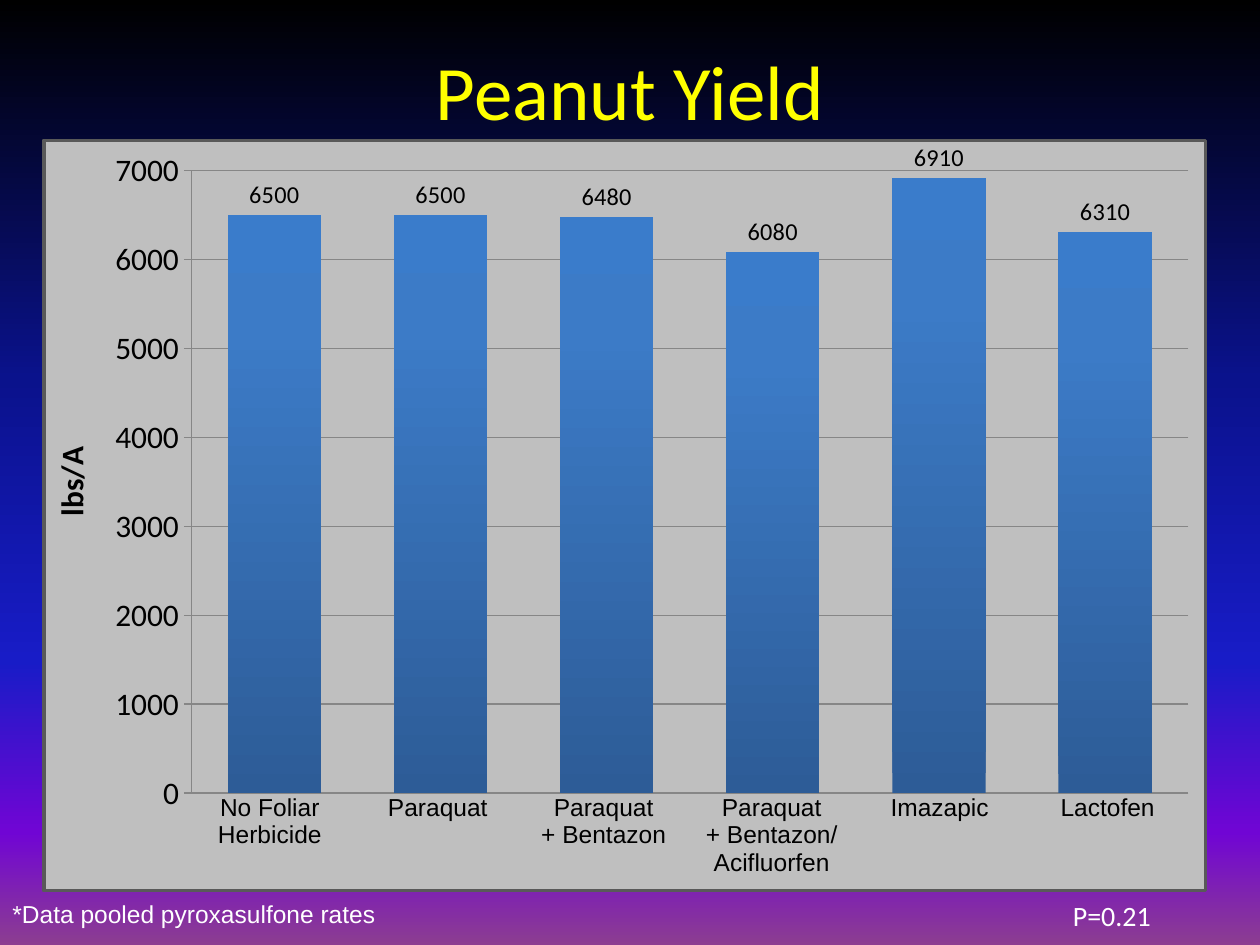
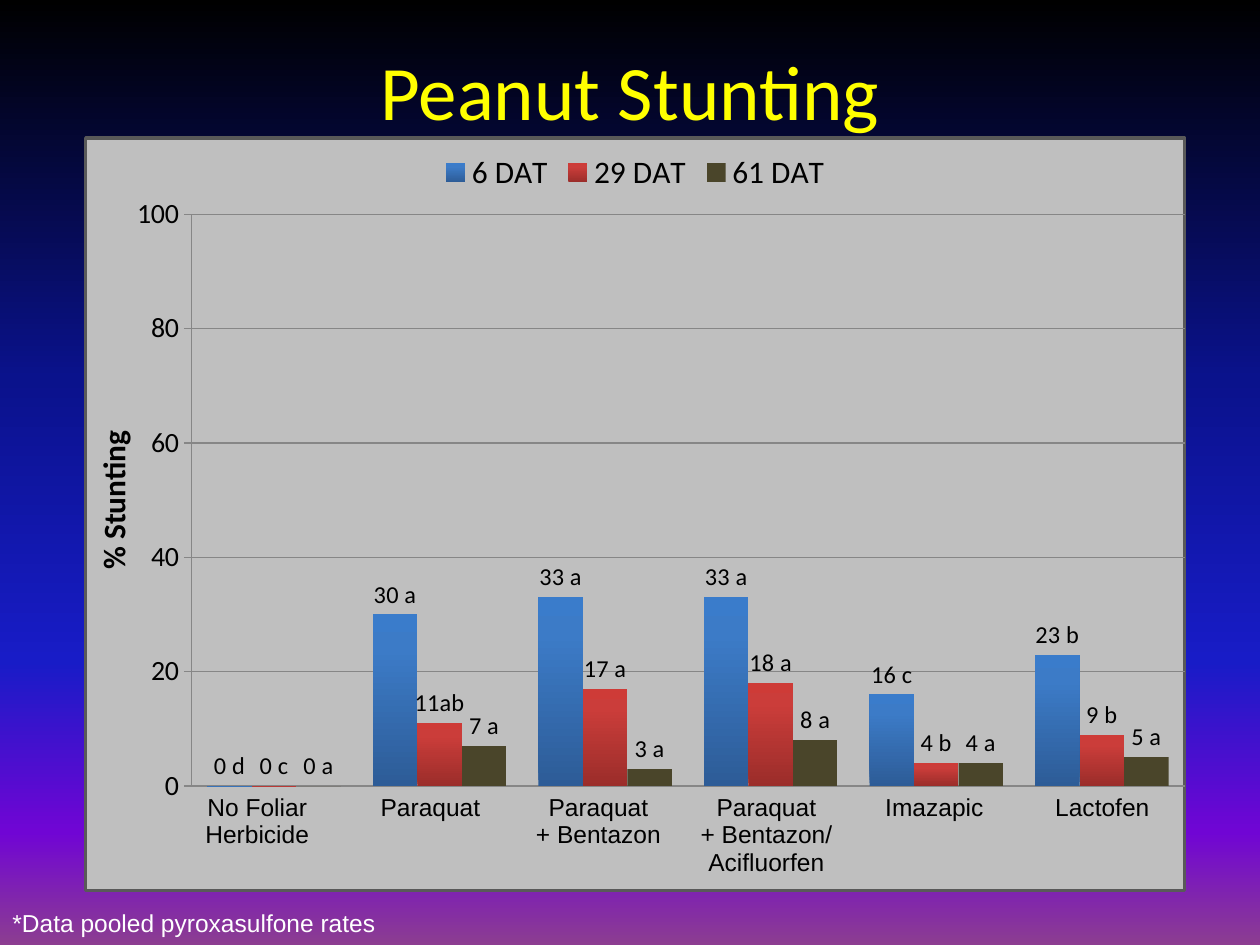
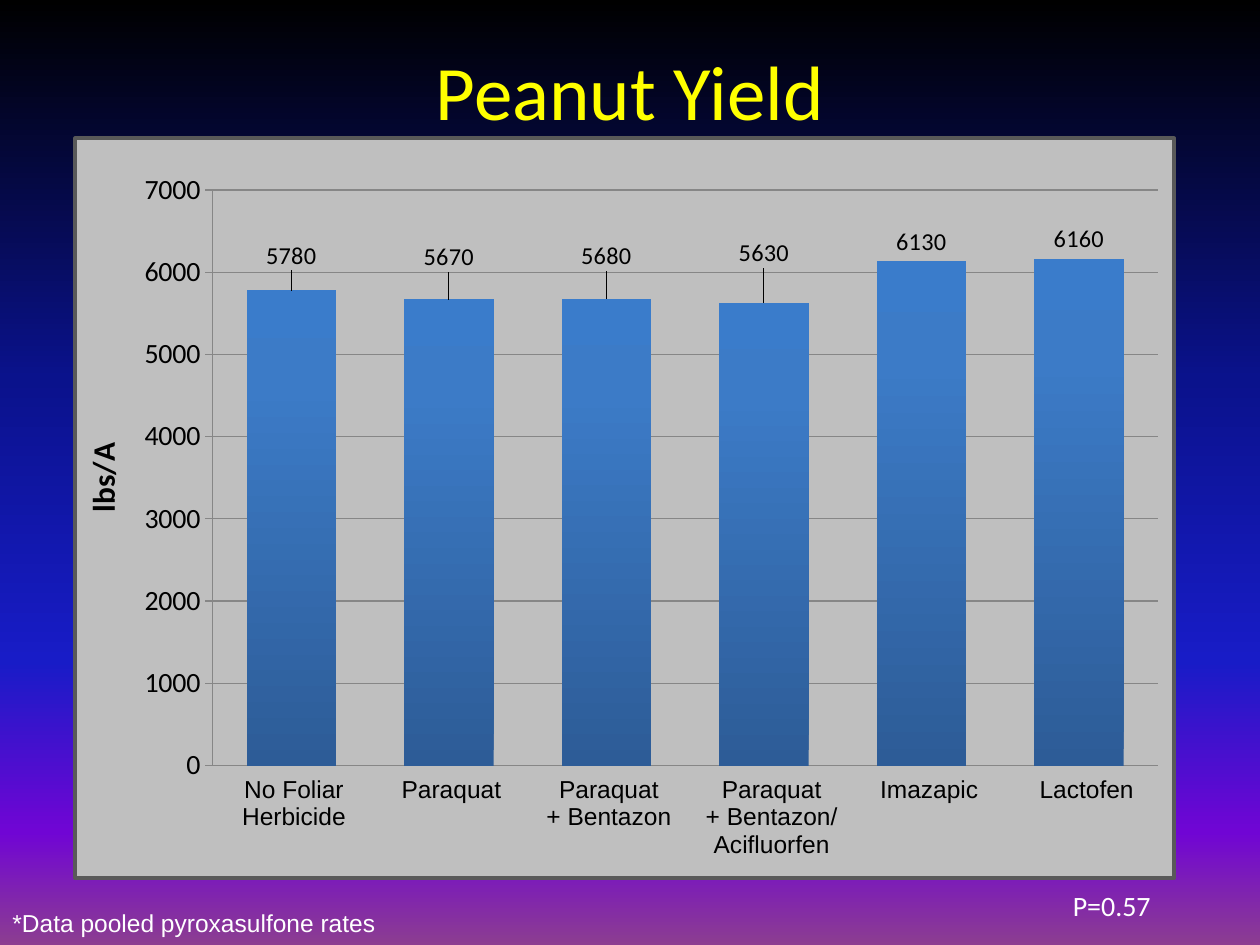
import pptx
import pptx.chart.data
import pptx.dml.color
import pptx.enum.chart
import pptx.enum.text
import pptx.oxml
import pptx.oxml.ns
import pptx.util

PX = 7620  # EMU per px, 120 px to the inch
NO_TABLE_STYLE = "{2D5ABB26-0587-4C30-8999-92F81FD0307C}"
COLORS = {
    "title": "FFFF00",
    "note": "FFFFFF",
    "text": "000000",
    "panel": "BFBFBF",
    "border": "595959",
    "grid": "868686",
}
BACKDROP = [(0, "000000"), (40, "0A128C"), (70, "181CC7"), (88, "7005D4"), (100, "8C3D91")]
BAR_FILLS = [
    [(0, "2D5C97"), (80, "3C7BC7"), (100, "3A7CCB")],
    [(0, "9B2D2A"), (80, "CB3D3A"), (100, "CE3B37")],
    [(0, "4A452A"), (100, "4A452A")],
]
TREATMENTS = [
    "No Foliar Herbicide",
    "Paraquat",
    "Paraquat\n+ Bentazon",
    "Paraquat\n+ Bentazon/\nAcifluorfen",
    "Imazapic",
    "Lactofen",
]
NAMESPACES = pptx.oxml.ns.nsdecls("c", "a")

# Each series: name, values, letters after the values, upward shifts of the labels
SLIDES = [
    {
        "title": "Peanut Yield", "axis": "lbs/A", "top": 7000, "step": 1000, "tick_size": 18,
        "chart": (40, 132, 1110, 718), "plot": (0.127, 0.04, 0.858, 0.83), "gap": 78,
        "series": [("Series 1", [6500, 6500, 6480, 6080, 6910, 6310], [""] * 6, [0] * 6)],
        "table": (170, 750, 112), "columns": [174, 146, 170, 150, 170, 150],
        "note_top": 850, "p_value": ("P=0.21", 1010, 850, 100, 30),
    },
    {
        "title": "Peanut Stunting", "axis": "% Stunting", "top": 100, "step": 20, "tick_size": 16,
        "chart": (80, 130, 1050, 720), "plot": (0.096, 0.101, 0.904, 0.76), "gap": 72,
        "series": [
            ("6 DAT", [0, 30, 33, 33, 16, 23], [" d", " a", " a", " a", " c", " b"], [0] * 6),
            ("29 DAT", [0, 11, 17, 18, 4, 9], [" c", "ab", " a", " a", " b", " b"], [0] * 6),
            ("61 DAT", [0, 7, 3, 8, 4, 5], [" a"] * 6, [0] * 6),
        ],
        "table": (160, 750, 100), "columns": [170] + [160] * 5,
        "note_top": 859, "p_value": None,
    },
    {
        "title": "Peanut Yield", "axis": "lbs/A", "top": 7000, "step": 1000, "tick_size": 16,
        "chart": (70, 130, 1050, 708), "plot": (0.125, 0.07, 0.86, 0.778), "gap": 76,
        "series": [("Series 1", [5780, 5670, 5680, 5630, 6130, 6160], [""] * 6,
                    [0.02, 0.03, 0.03, 0.04, 0, 0])],
        "table": (200, 733, 127), "columns": [160, 140, 160, 150, 150, 150],
        "note_top": 859, "p_value": ("P=0.57", 1010, 840, 110, 40),
    },
]


def style_font(font, size, color, name="Calibri", bold=False):
    font.size = pptx.util.Pt(size)
    font.name = name
    font.bold = bold
    font.color.rgb = pptx.dml.color.RGBColor.from_string(COLORS[color])


def set_gradient(fill, owner, stops, degrees):
    fill.gradient()
    gradient = owner.xpath(".//a:gradFill")[0]
    for child in list(gradient):
        gradient.remove(child)
    marks = "".join(
        f'<a:gs pos="{percent * 1000}"><a:srgbClr val="{color}"/></a:gs>' for percent, color in stops)
    gradient.append(pptx.oxml.parse_xml(f"<a:gsLst {NAMESPACES}>{marks}</a:gsLst>"))
    gradient.append(pptx.oxml.parse_xml(f'<a:lin {NAMESPACES} ang="{degrees * 60000}" scaled="0"/>'))


# Deck and shared backdrop
deck = pptx.Presentation()
deck.slide_width = 1200 * PX
deck.slide_height = 900 * PX
master = deck.slide_master
set_gradient(master.background.fill, master.element, BACKDROP, 90)

for content in SLIDES:
    page = deck.slides.add_slide(deck.slide_layouts[5])

    # Title
    title = page.shapes.title
    title.left, title.top, title.width, title.height = [n * PX for n in (60, 10, 1080, 150)]
    title.text_frame.text = content["title"]
    title.text_frame.vertical_anchor = pptx.enum.text.MSO_ANCHOR.MIDDLE
    para = title.text_frame.paragraphs[0]
    para.alignment = pptx.enum.text.PP_ALIGN.CENTER
    style_font(para.font, 44, "title")

    # Chart
    chart_data = pptx.chart.data.CategoryChartData()
    chart_data.categories = ["1", "2", "3", "4", "5", "6"]
    for name, values, letters, lifts in content["series"]:
        chart_data.add_series(name, values)
    chart = page.shapes.add_chart(
        pptx.enum.chart.XL_CHART_TYPE.COLUMN_CLUSTERED,
        *[n * PX for n in content["chart"]], chart_data).chart
    style_font(chart.font, 10, "text")
    chart.has_title = False
    chart.has_legend = len(content["series"]) > 1
    if chart.has_legend:
        chart.legend.position = pptx.enum.chart.XL_LEGEND_POSITION.TOP
        chart.legend.include_in_layout = False
        style_font(chart.legend.font, 18, "text")

    # Chart panel and plot area
    chart.element.xpath("c:chart")[0].addnext(pptx.oxml.parse_xml(
        f'<c:spPr {NAMESPACES}><a:solidFill><a:srgbClr val="{COLORS["panel"]}"/></a:solidFill>'
        f'<a:ln w="25400"><a:solidFill><a:srgbClr val="{COLORS["border"]}"/></a:solidFill></a:ln></c:spPr>'))
    plot_area = chart.element.xpath("c:chart/c:plotArea")[0]
    for layout in plot_area.xpath("c:layout"):
        plot_area.remove(layout)
    sides = "".join(f'<c:{side} val="{share}"/>' for side, share in zip("xywh", content["plot"]))
    plot_area.insert(0, pptx.oxml.parse_xml(
        f'<c:layout {NAMESPACES}><c:manualLayout><c:layoutTarget val="inner"/>'
        f'<c:xMode val="edge"/><c:yMode val="edge"/>{sides}</c:manualLayout></c:layout>'))

    # Axes
    chart.category_axis.visible = False
    axis = chart.value_axis
    axis.minimum_scale = 0
    axis.maximum_scale = content["top"]
    axis.major_unit = content["step"]
    axis.major_tick_mark = pptx.enum.chart.XL_TICK_MARK.OUTSIDE
    axis.has_major_gridlines = True
    for line in (axis.format.line, axis.major_gridlines.format.line):
        line.width = pptx.util.Pt(0.75)
        line.color.rgb = pptx.dml.color.RGBColor.from_string(COLORS["grid"])
    style_font(axis.tick_labels.font, content["tick_size"], "text")
    axis.axis_title.text_frame.text = content["axis"]
    style_font(axis.axis_title.text_frame.paragraphs[0].runs[0].font, 18, "text", bold=True)

    # Bars and their labels
    plot = chart.plots[0]
    plot.gap_width = content["gap"]
    plot.overlap = 0
    plot.vary_by_categories = False
    outside = pptx.enum.chart.XL_LABEL_POSITION.OUTSIDE_END
    series_elements = chart.element.xpath(".//c:ser")
    for series, element, stops, entry in zip(plot.series, series_elements, BAR_FILLS, content["series"]):
        set_gradient(series.format.fill, element, stops, 270)
        series.data_labels.show_value = True
        series.data_labels.position = outside
        style_font(series.data_labels.font, 14, "text")
        name, values, letters, lifts = entry
        for index, (value, letter, lift) in enumerate(zip(values, letters, lifts)):
            label = series.points[index].data_label
            label.text_frame.text = f"{value}{letter}"
            style_font(label.text_frame.paragraphs[0].runs[0].font, 14, "text")
            label.position = outside
            if lift:
                label_element = element.xpath(f".//c:dLbl[c:idx/@val='{index}']")[0]
                for layout in label_element.xpath("c:layout"):
                    label_element.remove(layout)
                label_element.insert(1, pptx.oxml.parse_xml(
                    f'<c:layout {NAMESPACES}><c:manualLayout><c:x val="0"/>'
                    f'<c:y val="{-lift}"/></c:manualLayout></c:layout>'))

    # Treatment names under the bars
    left, top, height = content["table"]
    frame = page.shapes.add_table(
        1, len(TREATMENTS), left * PX, top * PX, sum(content["columns"]) * PX, height * PX)
    frame.element.xpath(".//a:tableStyleId")[0].text = NO_TABLE_STYLE
    table = frame.table
    table.first_row = False
    table.horz_banding = False
    for column, width, cell, treatment in zip(
            table.columns, content["columns"], table.rows[0].cells, TREATMENTS):
        column.width = width * PX
        cell.fill.background()
        cell.text_frame.text = treatment
        for para in cell.text_frame.paragraphs:
            para.alignment = pptx.enum.text.PP_ALIGN.CENTER
            style_font(para.font, 14, "text", "Arial")

    # Footnote and P value
    notes = [("*Data pooled pyroxasulfone rates", 0, content["note_top"], 470, 41, 14, "Arial")]
    if content["p_value"]:
        notes.append((*content["p_value"], 16, "Calibri"))
    for text, left, top, width, height, size, font_name in notes:
        box = page.shapes.add_textbox(left * PX, top * PX, width * PX, height * PX)
        box.text_frame.word_wrap = True
        box.text_frame.margin_right = 0
        box.text_frame.text = text
        style_font(box.text_frame.paragraphs[0].font, size, "note", font_name)

deck.save("out.pptx")
